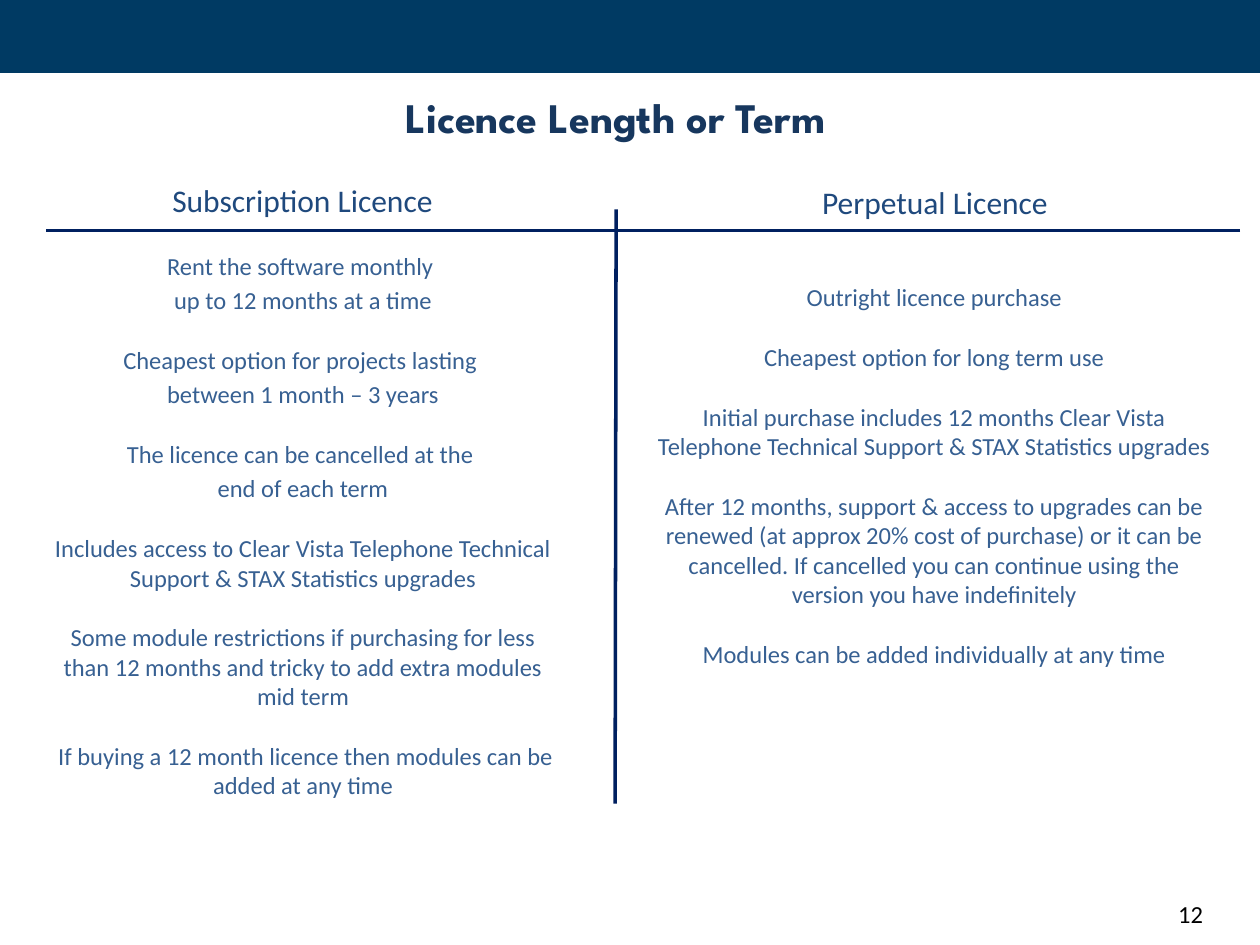
from lxml.etree import SubElement
from pptx import Presentation
from pptx.dml.color import RGBColor
from pptx.enum.shapes import MSO_CONNECTOR, MSO_SHAPE
from pptx.enum.text import MSO_ANCHOR, PP_ALIGN
from pptx.oxml.ns import qn
from pptx.util import Cm, Pt

BANNER_BLUE = RGBColor(0x00, 0x3A, 0x63)
TITLE_BLUE = RGBColor(0x17, 0x37, 0x5E)
HEADING_BLUE = RGBColor(0x1F, 0x49, 0x7D)
BODY_BLUE = RGBColor(0x37, 0x60, 0x92)
RULE_BLUE = RGBColor(0x00, 0x20, 0x60)
BLACK = RGBColor(0, 0, 0)

LINE_GAP = Pt(2.8)
POINT_GAP = Pt(17.4)

# Each point is a list of paragraphs that belong together
SUBSCRIPTION_POINTS = [
    ["Rent the software monthly ", "up to 12 months at a time"],
    ["Cheapest option for projects lasting ", "between 1 month – 3 years"],
    ["The licence can be cancelled at the ", "end of each term"],
    ["Includes access to Clear Vista Telephone Technical Support "
     "& STAX Statistics upgrades"],
    ["Some module restrictions if purchasing for less than 12 months "
     "and tricky to add extra modules mid term"],
    [" If buying a 12 month licence then modules can be added at any time"],
]
PERPETUAL_POINTS = [
    ["Outright licence purchase"],
    ["Cheapest option for long term use"],
    ["Initial purchase includes 12 months Clear Vista Telephone Technical "
     "Support & STAX Statistics upgrades"],
    ["After 12 months, support & access to upgrades can be renewed "
     "(at approx 20% cost of purchase) or it can be cancelled. If cancelled "
     "you can continue using the version you have indefinitely"],
    ["Modules can be added individually at any time"],
]


def add_banner(slide, width, height):
    banner = slide.shapes.add_shape(MSO_SHAPE.RECTANGLE, 0, 0, width, height)
    banner.shadow.inherit = False
    banner.fill.solid()
    banner.fill.fore_color.rgb = BANNER_BLUE
    banner.line.fill.background()


def add_frame(slide, left, top, width, height):
    box = slide.shapes.add_textbox(Cm(left), Cm(top), Cm(width), Cm(height))
    box.text_frame.word_wrap = True
    return box.text_frame


def write(paragraph, text, size, color, font="Calibri", bold=False,
          align=PP_ALIGN.CENTER):
    paragraph.alignment = align
    run = paragraph.add_run()
    run.text = text
    run.font.name = font
    run.font.size = Pt(size)
    run.font.bold = bold
    run.font.color.rgb = color


def add_points(slide, left, top, width, height, points):
    frame = add_frame(slide, left, top, width, height)
    for point_index, point in enumerate(points):
        for line_index, line in enumerate(point):
            if point_index == line_index == 0:
                paragraph = frame.paragraphs[0]
            else:
                paragraph = frame.add_paragraph()
                paragraph.space_before = LINE_GAP if line_index else POINT_GAP
            write(paragraph, line, 14, BODY_BLUE)


def add_rule(slide, x1, y1, x2, y2):
    rule = slide.shapes.add_connector(
        MSO_CONNECTOR.STRAIGHT, Cm(x1), Cm(y1), Cm(x2), Cm(y2))
    rule.line.color.rgb = RULE_BLUE
    rule.line.width = Pt(2)
    SubElement(rule._element.spPr, qn("a:effectLst"))


def main():
    prs = Presentation()
    prs.slide_width, prs.slide_height = Cm(25.4), Cm(19.05)
    slide = prs.slides.add_slide(prs.slide_layouts[6])

    # Banner and page number
    add_banner(slide, prs.slide_width, Cm(1.47))
    page_number = add_frame(slide, 23.5, 18, 1.6, 0.86)
    write(page_number.paragraphs[0], "12", 14, BLACK, align=PP_ALIGN.LEFT)

    # Title
    title = add_frame(slide, 1.3, 1.52, 22.22, 1.68)
    title.vertical_anchor = MSO_ANCHOR.MIDDLE
    write(title.paragraphs[0], "Licence Length or Term", 24, TITLE_BLUE,
          font="League Spartan", bold=True)

    # Points of each licence
    add_points(slide, 0.71, 4.93, 10.8, 12.6, SUBSCRIPTION_POINTS)
    add_points(slide, 12.98, 5.56, 11.71, 10.57, PERPETUAL_POINTS)

    # Dividing rules
    add_rule(slide, 12.42, 4.22, 12.4, 16.2)
    add_rule(slide, 25, 4.65, 0.92, 4.65)

    # Column headings
    for left, top, heading in ((2.95, 3.53, "Subscription Licence"),
                               (15.7, 3.56, "Perpetual Licence")):
        frame = add_frame(slide, left, top, 6.3, 1.02)
        write(frame.paragraphs[0], heading, 18, HEADING_BLUE)

    prs.save("out.pptx")


if __name__ == "__main__":
    main()
